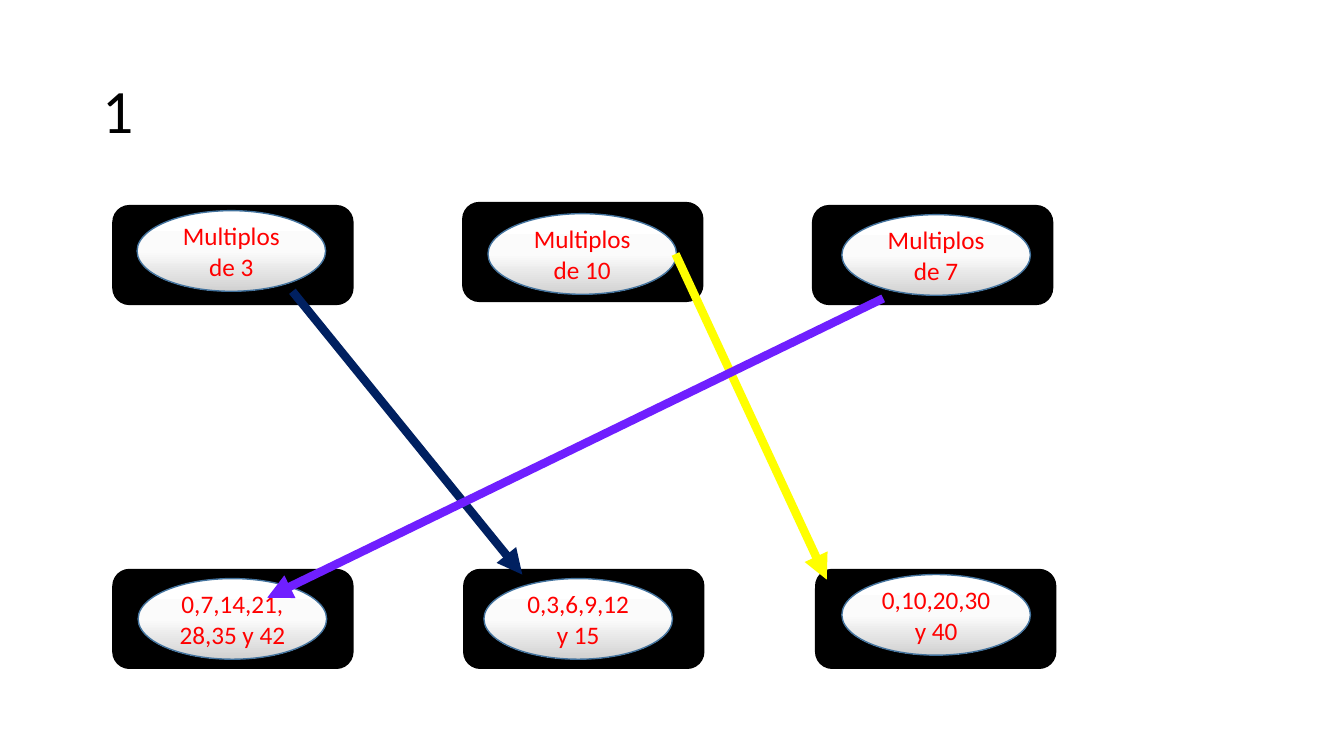
from copy import deepcopy

from lxml import etree
from pptx import Presentation
from pptx import util as u
from pptx.dml.color import RGBColor
from pptx.enum import shapes, text
from pptx.oxml.ns import qn

FONT = "Calibri"
CARD_SIZE = (2.38, 0.98)
OVAL_SIZE = (1.87, 0.8)
GRADIENT = [(0, "FFFFFF"), (0.5, "FBFBFB"), (1, "D1D1D1")]

# card left, top; oval left, top; label
ITEMS = [
    (1.12, 2.04, 1.36, 2.09, "Multiplos de 3"),
    (4.59, 2.01, 4.84, 2.12, "Multiplos de 10"),
    (8.06, 2.04, 8.35, 2.13, "Multiplos de 7"),
    (1.12, 5.65, 1.37, 5.74, "0,7,14,21,28,35 y 42"),
    (4.6, 5.65, 4.8, 5.74, "0,3,6,9,12 y 15"),
    (8.09, 5.65, 8.35, 5.7, "0,10,20,30 y 40"),
]

# start, end, colour
ARROWS = [
    ((2.9, 2.89), (5.18, 5.7), "002060"),
    ((6.7, 2.52), (8.2, 5.75), "FFFF00"),
    ((8.76, 2.96), (2.65, 5.93), "6F1FFF"),
]


def rgb(value):
    return RGBColor.from_string(value)


def inches(*values):
    return [u.Inches(v) for v in values]


def add_run(p, label, size, colour):
    r = p.add_run()
    r.text = label
    r.font.name = FONT
    r.font.size = u.Pt(size)
    r.font.color.rgb = rgb(colour)


def add_title(s, label):
    sp = s.shapes.title
    sp.left, sp.top, sp.width, sp.height = inches(0.92, 0.4, 11.5, 1.45)
    tf = sp.text_frame
    tf.vertical_anchor = text.MSO_ANCHOR.MIDDLE
    p = tf.paragraphs[0]
    p.alignment = text.PP_ALIGN.LEFT
    p.line_spacing = 0.9
    add_run(p, label, 44, "000000")


def add_outlined(s, kind, left, top, size, line):
    sp = s.shapes.add_shape(kind, *inches(left, top, *size))
    sp.shadow.inherit = False
    sp.line.color.rgb = rgb(line)
    sp.line.width = u.Pt(1)
    return sp


def add_card(s, left, top):
    sp = add_outlined(s, shapes.MSO_SHAPE.ROUNDED_RECTANGLE, left, top, CARD_SIZE, "000000")
    sp.fill.solid()
    sp.fill.fore_color.rgb = rgb("000000")


def fill_gradient(sp):
    sp.fill.gradient()
    sp.fill.gradient_angle = 270
    # A third stop goes between the two default ones
    stops = sp._element.spPr.find(qn("a:gradFill")).find(qn("a:gsLst"))
    stops.insert(1, deepcopy(stops[0]))
    for stop, (position, colour) in zip(sp.fill.gradient_stops, GRADIENT):
        stop.position = position
        stop.color.rgb = rgb(colour)


def add_oval(s, left, top, label):
    sp = add_outlined(s, shapes.MSO_SHAPE.OVAL, left, top, OVAL_SIZE, "43739E")
    fill_gradient(sp)
    tf = sp.text_frame
    tf.word_wrap = True
    tf.vertical_anchor = text.MSO_ANCHOR.MIDDLE
    p = tf.paragraphs[0]
    p.alignment = text.PP_ALIGN.CENTER
    add_run(p, label, 18, "FF0000")


def add_arrow(s, start, end, colour):
    line = s.shapes.add_connector(shapes.MSO_CONNECTOR.STRAIGHT, *inches(*start, *end))
    line.line.color.rgb = rgb(colour)
    line.line.width = u.Pt(6)
    etree.SubElement(line.line._get_or_add_ln(), qn("a:tailEnd"), type="triangle")
    etree.SubElement(line._element.spPr, qn("a:effectLst"))


def main():
    prs = Presentation()
    prs.slide_width, prs.slide_height = inches(13.33, 7.5)
    s = prs.slides.add_slide(prs.slide_layouts[5])
    add_title(s, "1")

    # Black cards behind, labelled ovals in front
    for left, top, *_ in ITEMS:
        add_card(s, left, top)
    for _, _, left, top, label in ITEMS:
        add_oval(s, left, top, label)

    # Arrows from each number to its multiples
    for start, end, colour in ARROWS:
        add_arrow(s, start, end, colour)

    prs.save("out.pptx")


if __name__ == "__main__":
    main()
